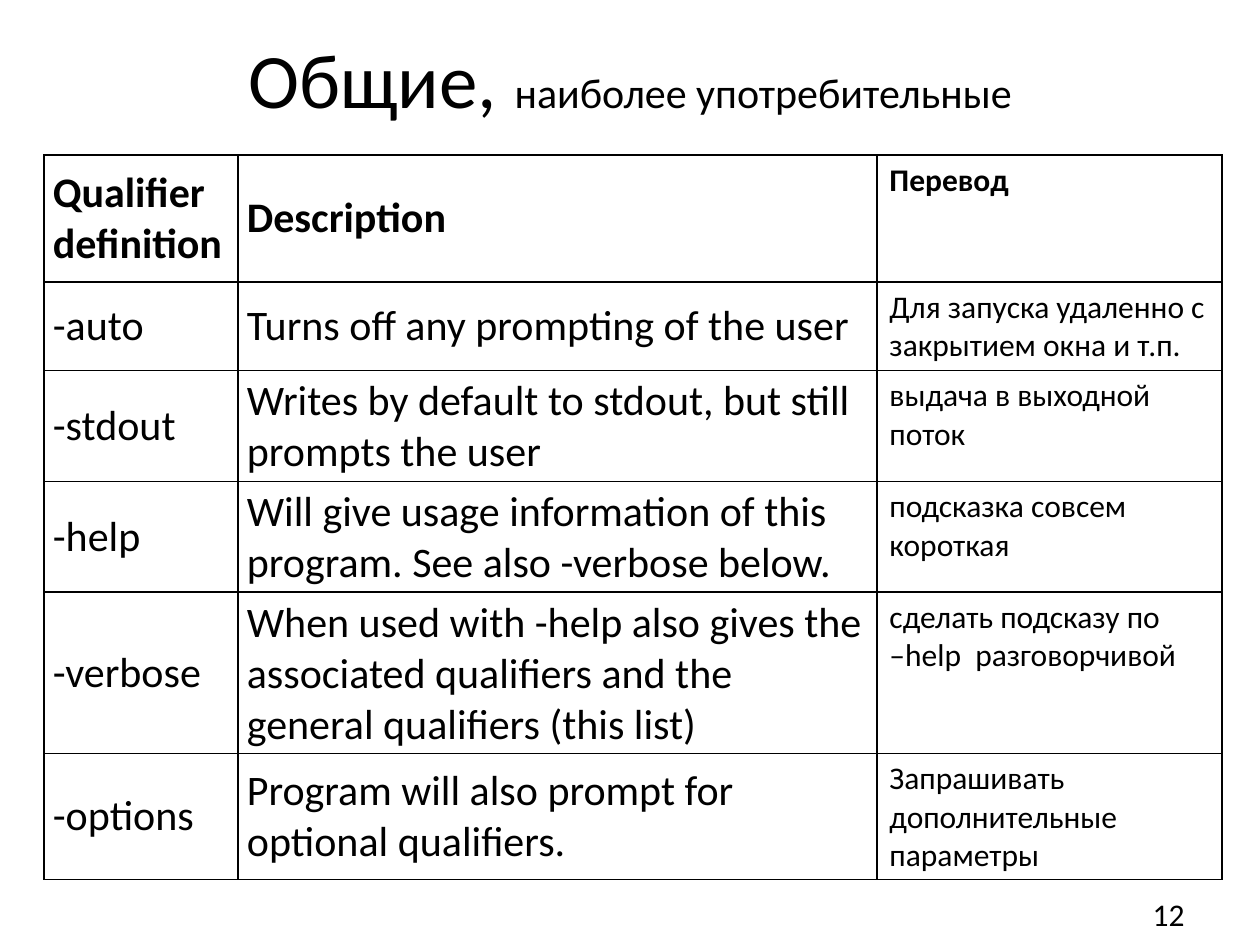
"""Build the slide listing the general command-line qualifiers."""
from lxml import etree
from pptx import Presentation
from pptx import util as u
from pptx.dml.color import RGBColor
from pptx.enum import text
from pptx.oxml import ns

BLACK = RGBColor(0x00, 0x00, 0x00)
WHITE = RGBColor(0xFF, 0xFF, 0xFF)

COLUMN_WIDTHS = [1.54, 5.07, 2.74]
ROW_HEIGHTS = [1.01, 0.46, 0.86, 0.86, 1.25, 0.86]
QUALIFIERS = [
    ("Qualifier definition", "Description", "Перевод"),
    ("-auto", "Turns off any prompting of the user",
     "Для запуска удаленно с закрытием окна и т.п."),
    ("-stdout", "Writes by default to stdout, but still prompts the user",
     "выдача в выходной поток"),
    ("-help", "Will give usage information of this program. See also -verbose below.",
     "подсказка совсем короткая"),
    ("-verbose", "When used with -help also gives the associated qualifiers "
     "and the general qualifiers (this list)",
     "сделать подсказу по \n–help  разговорчивой"),
    ("-options", "Program will also prompt for optional qualifiers.",
     "Запрашивать дополнительные параметры"),
]


def add_text(paragraph, wording, size=18, bold=False, color=BLACK, font="Calibri",
             align=text.PP_ALIGN.LEFT):
    paragraph.alignment = align
    for index, line in enumerate(wording.split("\n")):
        if index:
            paragraph.add_line_break()
        run = paragraph.add_run()
        run.text = line
        run.font.name = font
        run.font.size = u.Pt(size)
        run.font.bold = bold
        run.font.color.rgb = color


class SlideBuilder:
    def __init__(self, width, height):
        self.deck = Presentation()
        self.deck.slide_width = u.Inches(width)
        self.deck.slide_height = u.Inches(height)
        self.slide = self.deck.slides.add_slide(self.deck.slide_layouts[5])
        self.border_color = BLACK
        self.border_width = u.Pt(1)

    def title(self, box, parts):
        heading = self.slide.shapes.title
        heading.left, heading.top, heading.width, heading.height = map(u.Inches, box)
        heading.text_frame.vertical_anchor = text.MSO_ANCHOR.MIDDLE
        for wording, size in parts:
            add_text(heading.text_frame.paragraphs[0], wording, size=size,
                     align=text.PP_ALIGN.CENTER)

    def page_number(self, box, number):
        frame = self.slide.shapes.add_textbox(*map(u.Inches, box)).text_frame
        frame.word_wrap = True
        frame.vertical_anchor = text.MSO_ANCHOR.MIDDLE
        add_text(frame.paragraphs[0], number, align=text.PP_ALIGN.RIGHT)

    def border(self, cell):
        properties = cell._tc.get_or_add_tcPr()
        for position, side in enumerate(("lnL", "lnR", "lnT", "lnB")):
            line = etree.Element(ns.qn(f"a:{side}"), w=str(self.border_width))
            fill = etree.SubElement(line, ns.qn("a:solidFill"))
            etree.SubElement(fill, ns.qn("a:srgbClr"), val=str(self.border_color))
            properties.insert(position, line)

    def table(self, box, widths, heights, rows):
        grid = self.slide.shapes.add_table(
            len(rows), len(widths), *map(u.Inches, box)).table
        for column, width in zip(grid.columns, widths):
            column.width = u.Inches(width)
        for row, height in zip(grid.rows, heights):
            row.height = u.Inches(height)
        for row_index, row in enumerate(rows):
            for column_index, wording in enumerate(row):
                cell = grid.cell(row_index, column_index)
                translation = column_index == len(widths) - 1
                if not translation:
                    cell.vertical_anchor = text.MSO_ANCHOR.MIDDLE
                    cell.margin_left = cell.margin_right = u.Inches(0.07)
                    cell.margin_top = cell.margin_bottom = u.Inches(0.04)
                cell.fill.solid()
                cell.fill.fore_color.rgb = WHITE
                self.border(cell)
                add_text(cell.text_frame.paragraphs[0], wording,
                         size=18 if translation else 24, bold=row_index == 0)


def main():
    builder = SlideBuilder(10, 7.5)
    builder.title((0.5, 0.21, 9, 0.82),
                  [("Общие, ", 44), ("наиболее употребительные", 24)])
    builder.page_number((7.17, 7.05, 2.33, 0.4), "12")
    builder.table((0.35, 1.23, sum(COLUMN_WIDTHS), sum(ROW_HEIGHTS)),
                  COLUMN_WIDTHS, ROW_HEIGHTS, QUALIFIERS)
    builder.deck.save("out.pptx")


if __name__ == "__main__":
    main()
